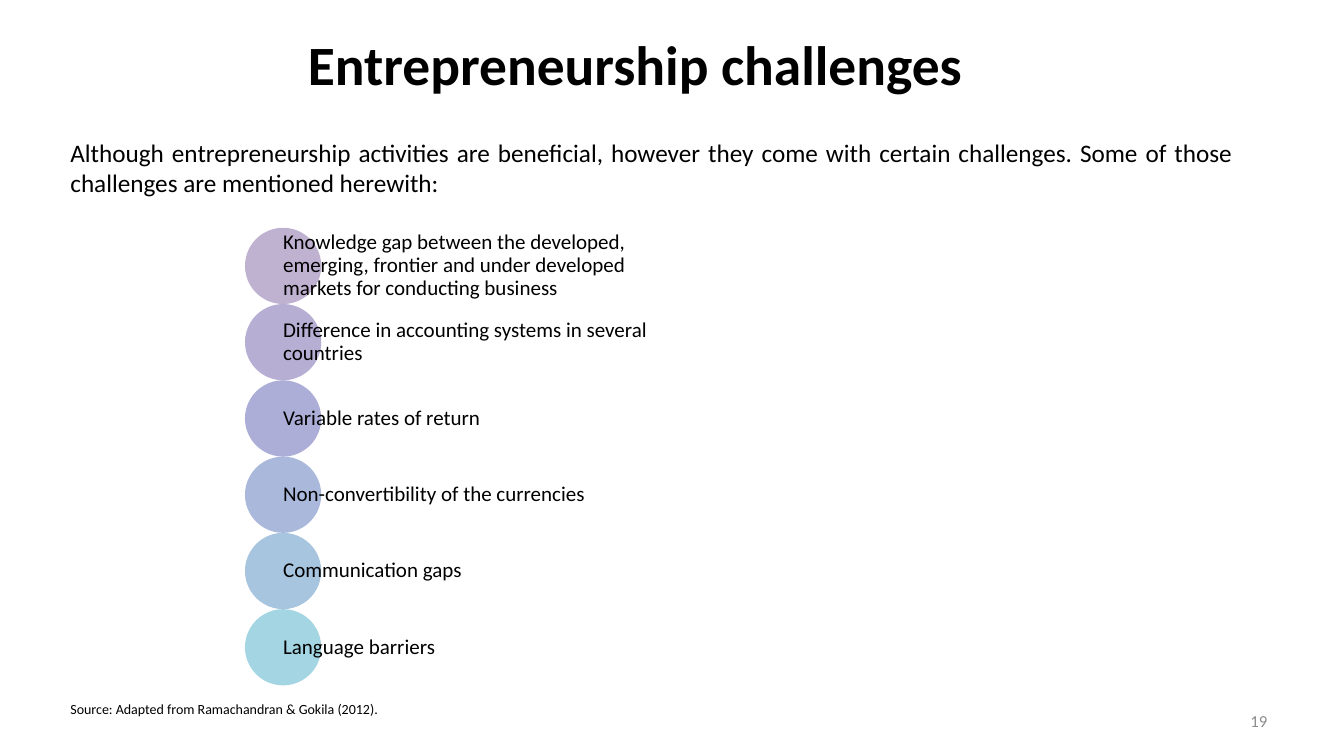
"""Build the entrepreneurship challenges slide."""
import dataclasses

import lxml.etree
import pptx
import pptx.dml.color
import pptx.enum.shapes
import pptx.enum.text
import pptx.oxml.ns
import pptx.util

TITLE = "Entrepreneurship challenges"
INTRO = (
    "Although entrepreneurship activities are beneficial, however they come with "
    "certain challenges. Some of those challenges are mentioned herewith:"
)
CHALLENGES = [
    ("Knowledge gap between the developed, emerging, frontier and under developed "
     "markets for conducting business", "8064A2"),
    ("Difference in accounting systems in several countries", "6E5FA9"),
    ("Variable rates of return", "5A5EB1"),
    ("Non-convertibility of the currencies", "5572B8"),
    ("Communication gaps", "508CBF"),
    ("Language barriers", "4BACC6"),
]
SOURCE = "Source: Adapted from Ramachandran & Gokila (2012)."
PAGE_NUMBER = "19"

SLIDE_WIDTH, SLIDE_HEIGHT = 13.33, 7.5
MARGIN = 0.6
LIST_LEFT, LIST_TOP, LIST_BOTTOM = 2.43, 2.26, 6.8
LABEL_WIDTH = 4.04

ALIGN = pptx.enum.text.PP_ALIGN
ANCHOR = pptx.enum.text.MSO_ANCHOR
FIT = pptx.enum.text.MSO_AUTO_SIZE


@dataclasses.dataclass(frozen=True)
class Theme:
    """Hold the font, colours and type sizes."""
    font: str = "Calibri"
    ink: str = "000000"
    muted: str = "8C8C8C"
    opacity: int = 50
    title: float = 39.6
    intro: float = 18
    label: float = 15
    number: float = 12
    source: float = 10


THEME = Theme()


def place(box, area):
    """Move a shape to an area given in inches."""
    box.left, box.top, box.width, box.height = map(pptx.util.Inches, area)


def write(box, text, size, align=ALIGN.LEFT, anchor=ANCHOR.TOP, color=THEME.ink,
          bold=False, wrap=True, fit=FIT.NONE):
    """Fill a box with one formatted paragraph."""
    frame = box.text_frame
    frame.text = text
    frame.word_wrap = wrap
    frame.auto_size = fit
    frame.vertical_anchor = anchor
    para = frame.paragraphs[0]
    para.alignment = align
    span = para.runs[0]
    span.font.name = THEME.font
    span.font.size = pptx.util.Pt(size)
    span.font.bold = bold
    span.font.color.rgb = pptx.dml.color.RGBColor.from_string(color)
    return para


def add_text(page, area, text, size, **style):
    """Add a text box and return it with its paragraph."""
    box = page.shapes.add_textbox(*map(pptx.util.Inches, area))
    return box, write(box, text, size, **style)


def add_circle(page, left, top, size, color):
    """Add a borderless translucent circle."""
    circle = page.shapes.add_shape(
        pptx.enum.shapes.MSO_SHAPE.OVAL, *map(pptx.util.Inches, (left, top, size, size)))
    circle.shadow.inherit = False
    circle.line.fill.background()
    circle.fill.solid()
    circle.fill.fore_color.rgb = pptx.dml.color.RGBColor.from_string(color)
    tint = circle.fill._xPr.find(".//" + pptx.oxml.ns.qn("a:srgbClr"))
    alpha = lxml.etree.SubElement(tint, pptx.oxml.ns.qn("a:alpha"))
    alpha.set("val", str(THEME.opacity * 1000))


def add_challenges(page):
    """Stack touching circles with labels starting at their centres."""
    size = (LIST_BOTTOM - LIST_TOP) / len(CHALLENGES)
    for row, (text, color) in enumerate(CHALLENGES):
        top = LIST_TOP + row * size
        add_circle(page, LIST_LEFT, top, size, color)
        area = (LIST_LEFT + size / 2, top, LABEL_WIDTH, size)
        box, para = add_text(page, area, text, THEME.label, anchor=ANCHOR.MIDDLE)
        para.line_spacing = 0.9
        frame = box.text_frame
        frame.margin_left = frame.margin_right = 0
        frame.margin_top = frame.margin_bottom = pptx.util.Inches(0.02)


def main():
    """Compose and save the slide."""
    deck = pptx.Presentation()
    deck.slide_width = pptx.util.Inches(SLIDE_WIDTH)
    deck.slide_height = pptx.util.Inches(SLIDE_HEIGHT)
    page = deck.slides.add_slide(deck.slide_layouts.get_by_name("Title Only"))

    title = page.shapes.title
    place(title, (0.37, 0.22, 10.76, 0.81))
    write(title, TITLE, THEME.title, align=ALIGN.CENTER, anchor=ANCHOR.MIDDLE, bold=True)
    title.text_frame.margin_left = pptx.util.Inches(1.2)

    add_challenges(page)
    add_text(page, (9.56, 6.95, 3.11, 0.4), PAGE_NUMBER, THEME.number,
             align=ALIGN.RIGHT, anchor=ANCHOR.MIDDLE, color=THEME.muted)
    add_text(page, (MARGIN, 1.31, SLIDE_WIDTH - MARGIN - 1, 0.71), INTRO, THEME.intro,
             align=ALIGN.JUSTIFY, fit=FIT.SHAPE_TO_FIT_TEXT)
    add_text(page, (MARGIN, 6.9, 3.3, 0.27), SOURCE, THEME.source,
             wrap=False, fit=FIT.SHAPE_TO_FIT_TEXT)
    deck.save("out.pptx")


if __name__ == "__main__":
    main()
